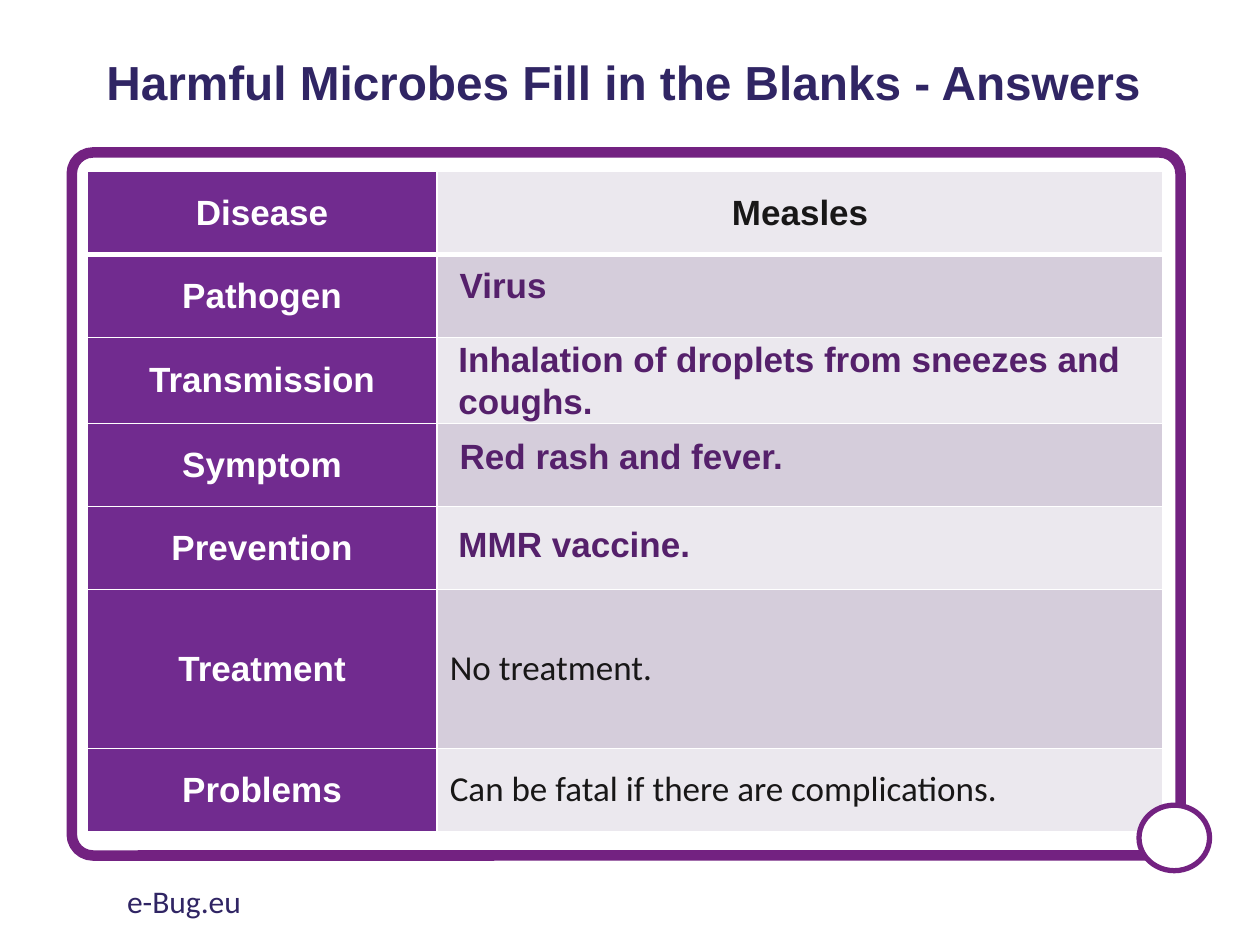
from collections import namedtuple

from lxml.etree import SubElement
from pptx import Presentation
from pptx.dml.color import RGBColor
from pptx.enum.shapes import MSO_SHAPE as Shape
from pptx.enum.text import MSO_ANCHOR as Anchor, PP_ALIGN as Align
from pptx.oxml.ns import qn
from pptx.util import Inches, Pt

NAVY = RGBColor(0x30, 0x25, 0x64)
PURPLE = RGBColor(0x71, 0x2B, 0x8F)
FRAME_PURPLE = RGBColor(0x73, 0x22, 0x81)
ANSWER_PURPLE = RGBColor(0x55, 0x20, 0x6B)
INK = RGBColor(0x18, 0x17, 0x17)
WHITE = RGBColor(0xFF, 0xFF, 0xFF)
LIGHT = RGBColor(0xEB, 0xE8, 0xEE)
DARK = RGBColor(0xD5, 0xCD, 0xDB)

# The slide is a grid of 100 columns by 75 rows of square units.
COLUMNS, ROWS = 100, 75
UNIT = Inches(10) / COLUMNS
Box = namedtuple("Box", "left top width height")

LABEL_WIDTH, ENTRY_WIDTH = 27.8, 57.6
ROW = 6.6
# label, row height, text in the cell
TABLE_ROWS = [
    ("Disease", ROW, "Measles"),
    ("Pathogen", ROW, ""),
    ("Transmission", 6.8, ""),
    ("Symptom", ROW, ""),
    ("Prevention", ROW, ""),
    ("Treatment", 12.6, "No treatment."),
    ("Problems", ROW, "Can be fatal if there are complications."),
]
# text, then left, top, width and height from the table's corner
ANSWERS = [
    ("Virus", Box(28.6, 6.8, 53, 4.4)),
    ("Inhalation of droplets from sneezes and coughs.", Box(28.5, 12.7, 57.6, 7.7)),
    ("Red rash and fever.", Box(28.6, 20.4, 53, 4.4)),
    ("MMR vaccine.", Box(28.5, 27.4, 53, 4.4)),
]


def units(count):
    return round(count * UNIT)


def place(box):
    return [units(value) for value in box]


def write(frame, text, size=20, font="Arial", color=INK, bold=False,
          align=Align.LEFT, spacing=None):
    para = frame.paragraphs[0]
    para.alignment = align
    para.line_spacing = spacing
    span = para.add_run()
    span.text = text
    span.font.size = Pt(size)
    span.font.name = font
    span.font.bold = bold
    span.font.color.rgb = color


def add_text(page, box, text, anchor=Anchor.TOP, **style):
    frame = page.shapes.add_textbox(*place(box)).text_frame
    frame.word_wrap = True
    frame.vertical_anchor = anchor
    write(frame, text, **style)


def add_outline(page, kind, box, width):
    shape = page.shapes.add_shape(kind, *place(box))
    shape.shadow.inherit = False
    shape.fill.background()
    shape.line.color.rgb = FRAME_PURPLE
    shape.line.width = Pt(width)
    return shape


def style_cell(cell, fill, top, bottom):
    """Fill a cell and rule it in white; top and bottom are widths in points."""
    cell.vertical_anchor = Anchor.MIDDLE
    props = cell._tc.get_or_add_tcPr()
    for side, width in (("L", 1), ("R", 1), ("T", top), ("B", bottom)):
        line = SubElement(props, qn(f"a:ln{side}"), w=str(Pt(width)))
        solid = SubElement(line, qn("a:solidFill"))
        SubElement(solid, qn("a:srgbClr"), val=str(WHITE))
    cell.fill.solid()
    cell.fill.fore_color.rgb = fill


def disease_table(page, box):
    table = page.shapes.add_table(len(TABLE_ROWS), 2, *place(box)).table
    for column, width in zip(table.columns, (LABEL_WIDTH, ENTRY_WIDTH)):
        column.width = units(width)
    for index, (label, height, entry) in enumerate(TABLE_ROWS):
        table.rows[index].height = units(height)
        label_cell, entry_cell = table.cell(index, 0), table.cell(index, 1)
        rules = {"top": 3 if index == 1 else 1, "bottom": 3 if index == 0 else 1}
        style_cell(label_cell, PURPLE, **rules)
        style_cell(entry_cell, DARK if index % 2 else LIGHT, **rules)
        write(label_cell.text_frame, label, color=WHITE, bold=True, align=Align.CENTER)
        if index == 0:
            write(entry_cell.text_frame, entry, bold=True, align=Align.CENTER)
        elif entry:
            write(entry_cell.text_frame, entry, font="Calibri")


def answers(page, box):
    for text, offset in ANSWERS:
        spot = offset._replace(left=box.left + offset.left, top=box.top + offset.top)
        add_text(page, spot, text, color=ANSWER_PURPLE, bold=True)


def frame_with_knob(page, box):
    """Draw a rounded frame with a white circle at its lower right corner."""
    frame = add_outline(page, Shape.ROUNDED_RECTANGLE, box, 6)
    frame.adjustments[0] = 0.03
    width, height = 5.6, 5.2
    center_x = box.left + box.width - 0.5
    center_y = box.top + box.height - 1.4
    spot = Box(center_x - width / 2, center_y - height / 2, width, height)
    knob = add_outline(page, Shape.OVAL, spot, 3)
    knob.fill.solid()
    knob.fill.fore_color.rgb = WHITE


def main():
    deck = Presentation()
    deck.slide_width, deck.slide_height = units(COLUMNS), units(ROWS)
    page = deck.slides.add_slide(deck.slide_layouts[6])
    add_text(page, Box(6.9, 2, 86.2, 9.5), "Harmful Microbes Fill in the Blanks - Answers ",
             anchor=Anchor.MIDDLE, size=27.3, color=NAVY, bold=True,
             align=Align.CENTER, spacing=0.9)
    table_box = Box(6.9, 13.6, LABEL_WIDTH + ENTRY_WIDTH, sum(row[1] for row in TABLE_ROWS))
    disease_table(page, table_box)
    answers(page, table_box)
    frame_with_knob(page, Box(5.7, 12.1, 88, 55.8))
    add_text(page, Box(9.1, 69.5, 33.8, 4), "e-Bug.eu", size=18, font="Calibri", color=NAVY)
    deck.save("out.pptx")


if __name__ == "__main__":
    main()
